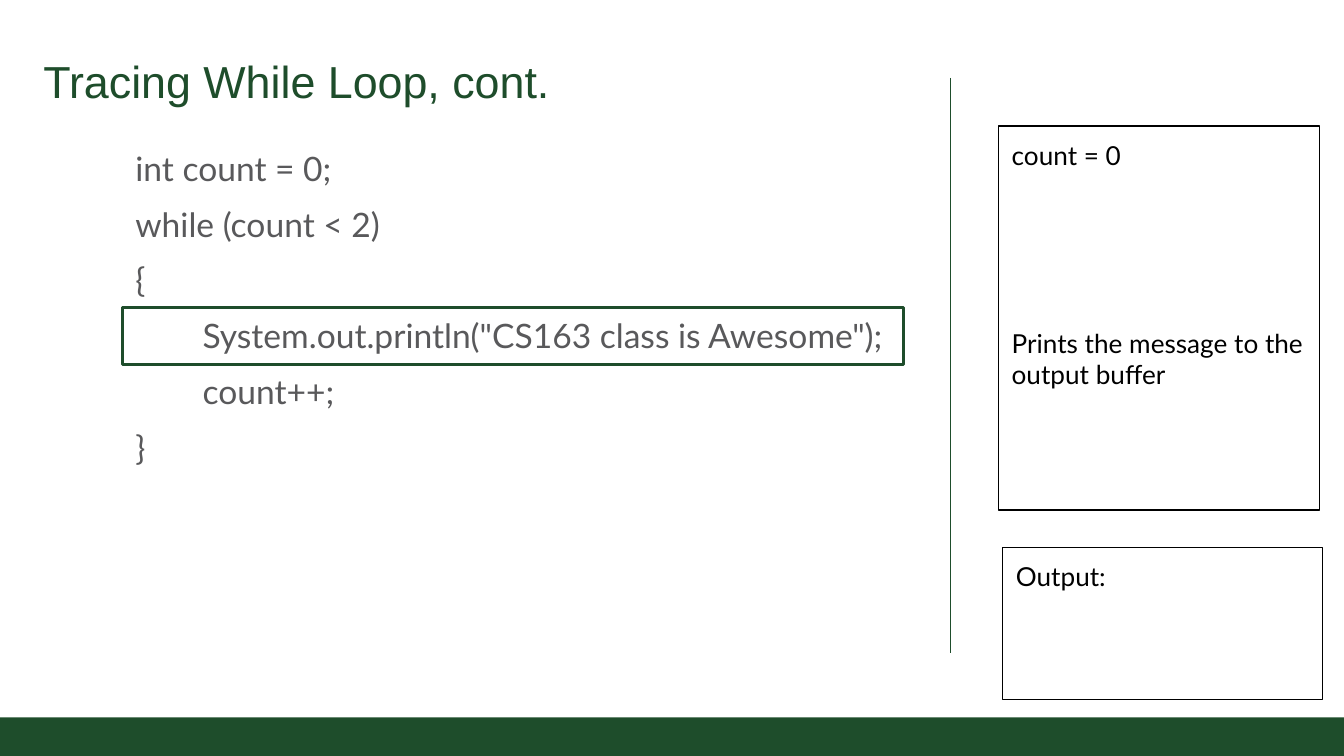
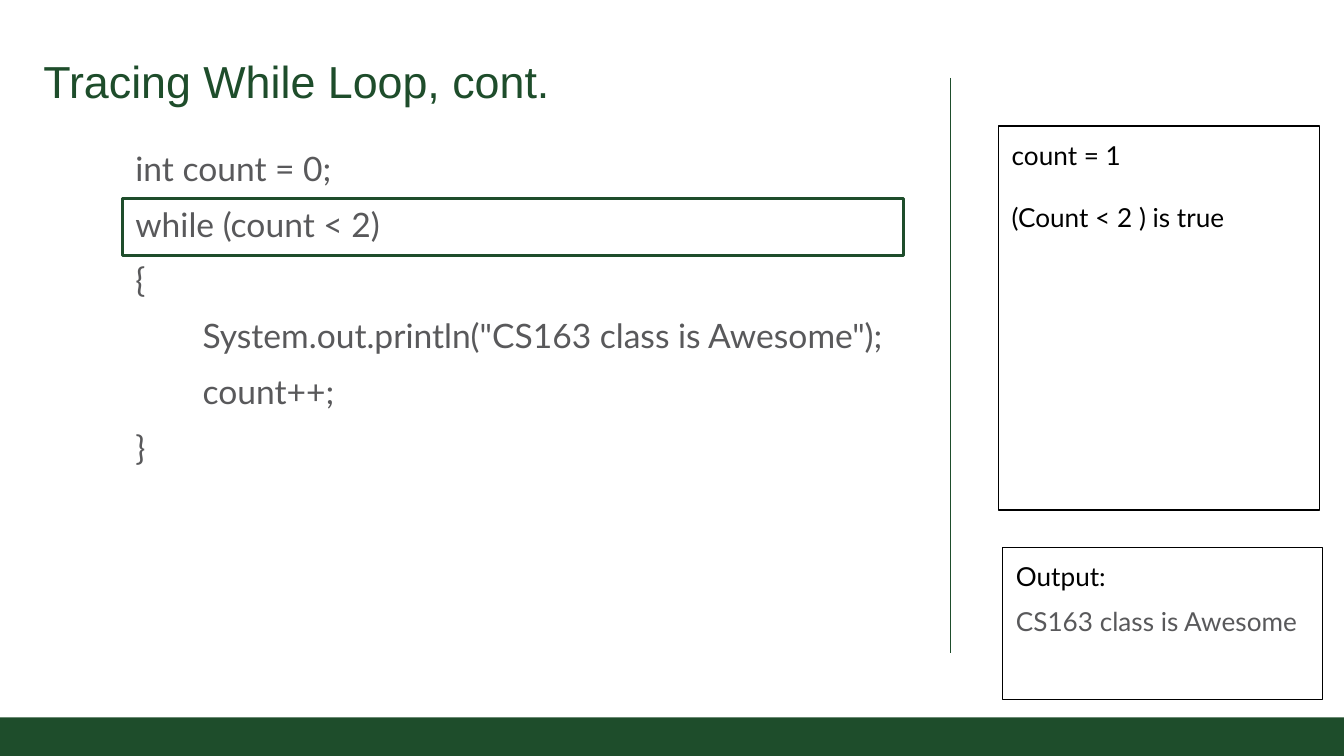
from lxml import etree
from pptx import Presentation
from pptx.dml.color import RGBColor
from pptx.enum.shapes import MSO_CONNECTOR, MSO_SHAPE
from pptx.enum.text import MSO_ANCHOR, PP_ALIGN
from pptx.oxml.ns import qn
from pptx.util import Cm, Pt

RECTANGLE = MSO_SHAPE.RECTANGLE
STRAIGHT = MSO_CONNECTOR.STRAIGHT
TOP, BOTTOM = MSO_ANCHOR.TOP, MSO_ANCHOR.BOTTOM
LEFT = PP_ALIGN.LEFT

GREEN = RGBColor(0x1E, 0x4D, 0x2B)
GREY = RGBColor(0x59, 0x59, 0x5B)
BLACK = RGBColor(0, 0, 0)

TITLE = "Tracing While Loop, cont."
CODE_LEFT = 2.31
FIRST_ROW_TOP, ROW_STEP = 2.73, 1.03
INDENT = Cm(1.27)

# Code lines: text, indented
CODE = [
    ("int count = 0;", False),
    ("while (count < 2)", False),
    ("{", False),
    ('System.out.println("CS163 class is Awesome");', True),
    ("count++;", True),
    ("}", False),
]

# Steps: highlighted code row, variables, note, points above the note, output
STEPS = [
    (3, "count = 0", "Prints the message to the output buffer", 84, None),
    (1, "count = 1", "(Count < 2 ) is true", 16.8, "CS163 class is Awesome"),
]


def add_box(page, left, top, width, height, line=None, weight=0.75, fill=None):
    box = page.shapes.add_shape(RECTANGLE, Cm(left), Cm(top), Cm(width), Cm(height))
    box.shadow.inherit = False
    if fill is None:
        box.fill.background()
    else:
        box.fill.solid()
        box.fill.fore_color.rgb = fill
    if line is None:
        box.line.fill.background()
    else:
        box.line.color.rgb = line
        box.line.width = Pt(weight)
    return box


def write(box, lines, size, color, font="Lato", inset=0.25, anchor=TOP):
    frame = box.text_frame
    frame.word_wrap = True
    frame.vertical_anchor = anchor
    frame.margin_left = frame.margin_right = Cm(inset)
    frame.margin_top = frame.margin_bottom = Cm(inset)
    for number, text in enumerate(lines):
        para = frame.add_paragraph() if number else frame.paragraphs[0]
        para.text = text
        para.alignment = LEFT
        para.font.name = font
        para.font.size = Pt(size)
        para.font.color.rgb = color
    return frame.paragraphs


deck = Presentation()
deck.slide_width, deck.slide_height = Cm(25.4), Cm(14.29)

for row, variables, note, note_gap, output in STEPS:
    page = deck.slides.add_slide(deck.slide_layouts[6])

    # Footer band
    add_box(page, 0, 13.56, 25.45, 0.74, fill=GREEN)

    # Code
    code_box = page.shapes.add_textbox(Cm(CODE_LEFT), Cm(2.39), Cm(15.37), Cm(8.23))
    paras = write(code_box, [text for text, _ in CODE], 18, GREY)
    for number, (para, (_, indented)) in enumerate(zip(paras, CODE)):
        para.line_spacing = 1.2
        if number:
            para.space_before = Pt(4)
        if indented:
            para._p.get_or_add_pPr().set("indent", str(INDENT))

    # Highlight around the current code row
    add_box(page, CODE_LEFT, FIRST_ROW_TOP + row * ROW_STEP, 14.76, 1.07, GREEN, 1.5)

    # Divider
    divider = page.shapes.add_connector(STRAIGHT, Cm(17.96), Cm(1.47), Cm(17.96), Cm(12.34))
    divider.line.color.rgb = GREEN
    divider.line.width = Pt(0.75)
    etree.SubElement(divider._element.spPr, qn("a:effectLst"))

    # Variables panel
    state_box = add_box(page, 18.87, 2.38, 6.07, 7.26, BLACK)
    paras = write(state_box, [variables, note], 14, BLACK)
    paras[1].space_before = Pt(note_gap)

    # Output panel
    output_box = add_box(page, 18.95, 10.35, 6.05, 2.87, BLACK)
    paras = write(output_box, ["Output:", output] if output else ["Output:"], 14, BLACK)
    for para in paras[1:]:
        para.line_spacing = 1.2
        para.space_before = para.space_after = Pt(4)
        para.font.color.rgb = GREY

    # Title
    title_box = page.shapes.add_textbox(Cm(0.64), Cm(0.36), Cm(13.64), Cm(1.85))
    write(title_box, [TITLE], 24, GREEN, "Arial", 0.18, BOTTOM)

deck.save("out.pptx")
